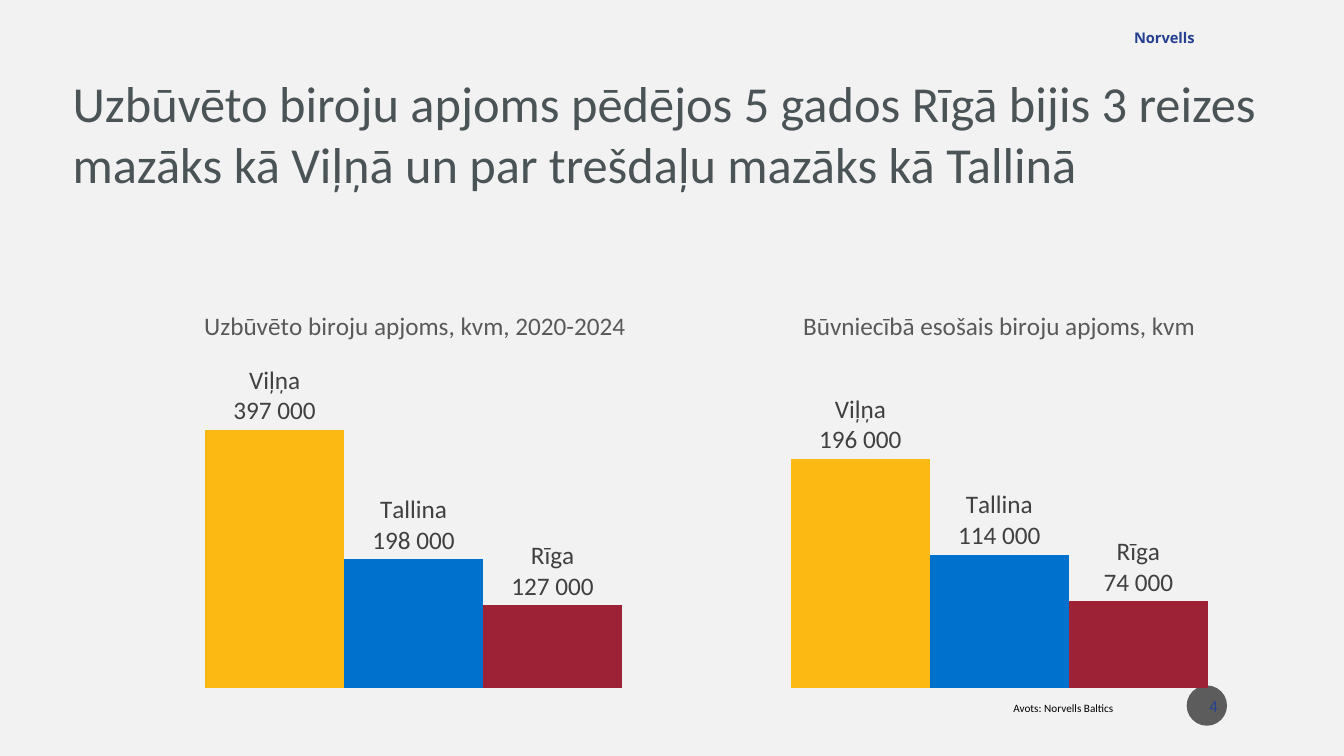
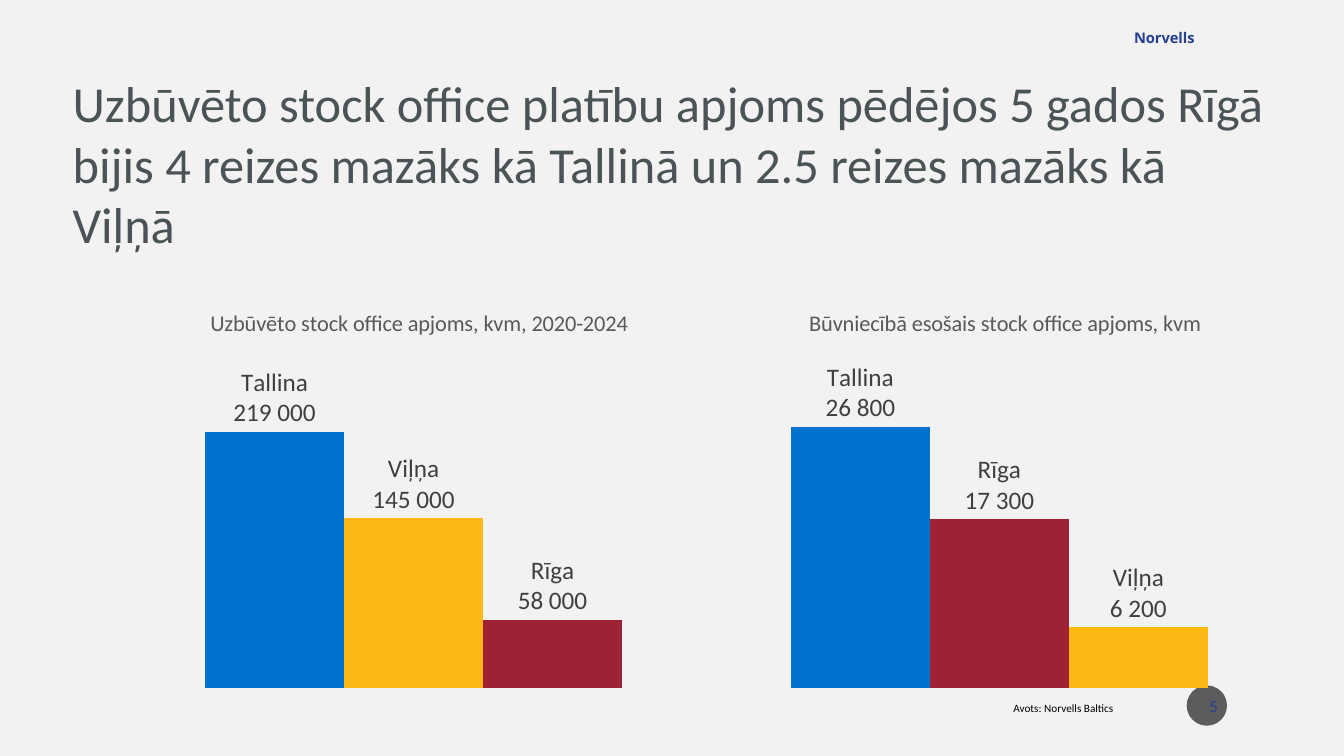
from dataclasses import dataclass

from lxml import etree
from pptx import Presentation
from pptx.chart.data import CategoryChartData
from pptx.dml.color import RGBColor
from pptx.enum.chart import XL_CHART_TYPE, XL_LABEL_POSITION
from pptx.enum.shapes import MSO_SHAPE
from pptx.enum.text import MSO_ANCHOR, MSO_AUTO_SIZE, PP_ALIGN
from pptx.oxml.ns import qn
from pptx.util import Inches, Pt

COLUMNS = XL_CHART_TYPE.COLUMN_CLUSTERED
OUTSIDE_END = XL_LABEL_POSITION.OUTSIDE_END
ELLIPSE = MSO_SHAPE.OVAL
TOP, MIDDLE = MSO_ANCHOR.TOP, MSO_ANCHOR.MIDDLE
LEFT, RIGHT = PP_ALIGN.LEFT, PP_ALIGN.RIGHT
NO_AUTO_SIZE = MSO_AUTO_SIZE.NONE


@dataclass(frozen=True)
class Theme:
    background: str = "F2F2F2"
    title: str = "4A5356"
    brand: str = "25408F"
    badge: str = "1D1D1D"
    source: str = "000000"
    chart_title: str = "595959"
    label: str = "404040"
    body_font: str = "Calibri"
    brand_font: str = "Open Sans"
    title_size: float = 36
    brand_size: float = 10.5
    number_size: float = 12
    source_size: float = 8
    chart_size: float = 10
    label_size: float = 18


CITY_COLORS = {"Viļņa": "FDB913", "Tallina": "0072CE", "Rīga": "9D2235"}
CHART_LEFTS = (0.87, 6.68)
BRAND = "Norvells"
SOURCE = "Avots: Norvells Baltics"

SLIDES = [
    {
        "number": 4,
        "title": "Uzbūvēto biroju apjoms pēdējos 5 gados Rīgā bijis 3 reizes "
                 "mazāks kā Viļņā un par trešdaļu mazāks kā Tallinā",
        "chart_title_size": 18,
        "charts": [
            ("Uzbūvēto biroju apjoms, kvm, 2020-2024", 0.17, 450000,
             {"Viļņa": 397000, "Tallina": 198000, "Rīga": 127000}),
            ("Būvniecībā esošais biroju apjoms, kvm", 0.19, 250000,
             {"Viļņa": 196000, "Tallina": 114000, "Rīga": 74000}),
        ],
    },
    {
        "number": 5,
        "title": "Uzbūvēto stock office platību apjoms pēdējos 5 gados Rīgā bijis "
                 "4 reizes mazāks kā Tallinā un 2.5 reizes mazāks kā Viļņā",
        "chart_title_size": 16,
        "charts": [
            ("Uzbūvēto stock office apjoms, kvm, 2020-2024", 0.18, 250000,
             {"Tallina": 219000, "Viļņa": 145000, "Rīga": 58000}),
            ("Būvniecībā esošais stock office apjoms, kvm", 0.2, 30000,
             {"Tallina": 26800, "Rīga": 17300, "Viļņa": 6200}),
        ],
    },
]


def set_layout(parent, index, **settings):
    for existing in parent.findall(qn("c:layout")):
        parent.remove(existing)
    layout = etree.Element(qn("c:layout"))
    manual = etree.SubElement(layout, qn("c:manualLayout"))
    for name, value in settings.items():
        etree.SubElement(manual, qn(f"c:{name}")).set("val", str(value))
    parent.insert(index, layout)


class Deck:
    def __init__(self, theme):
        self.theme = theme
        self.presentation = Presentation()
        self.presentation.slide_width = Inches(13.33)
        self.presentation.slide_height = Inches(7.5)
        self.fill(self.presentation.slide_master.background.fill, theme.background)
        self.slide = None

    def fill(self, fill, color):
        fill.solid()
        fill.fore_color.rgb = RGBColor.from_string(color)

    def style(self, font, size, color, name=None, bold=False):
        font.name = name or self.theme.body_font
        font.size = Pt(size)
        font.bold = bold
        font.color.rgb = RGBColor.from_string(color)

    def set_text(self, shape, box, text, size, color, name=None, bold=False,
                 align=LEFT, anchor=TOP):
        shape.left, shape.top, shape.width, shape.height = map(Inches, box)
        frame = shape.text_frame
        frame.text = text
        frame.word_wrap = True
        frame.auto_size = NO_AUTO_SIZE
        frame.vertical_anchor = anchor
        frame.margin_left = frame.margin_right = 0
        frame.margin_top = frame.margin_bottom = 0
        paragraph = frame.paragraphs[0]
        paragraph.alignment = align
        self.style(paragraph.runs[0].font, size, color, name, bold)
        return paragraph

    def text(self, box, *content, **options):
        shape = self.slide.shapes.add_textbox(*map(Inches, box))
        self.set_text(shape, box, *content, **options)

    def title(self, text):
        paragraph = self.set_text(self.slide.shapes.title, (0.72, 0.72, 11.91, 0.45),
                                  text, self.theme.title_size, self.theme.title)
        paragraph.space_before = Pt(3)
        paragraph.space_after = Pt(6)

    def badge(self, number):
        box = (11.77, 6.8, 0.4, 0.4)
        shape = self.slide.shapes.add_shape(ELLIPSE, *map(Inches, box))
        shape.shadow.inherit = False
        shape.line.fill.background()
        self.fill(shape.fill, self.theme.badge)
        color = shape._element.spPr.find(qn("a:solidFill"))[0]
        etree.SubElement(color, qn("a:alpha")).set("val", "70000")
        self.text((11.77, 6.88, 0.31, 0.24), str(number), self.theme.number_size,
                  self.theme.brand, align=RIGHT, anchor=MIDDLE)

    def add_slide(self, title, number):
        layout = self.presentation.slide_layouts[5]
        self.slide = self.presentation.slides.add_slide(layout)
        self.title(title)
        self.badge(number)
        self.text((6.78, 0.27, 5.07, 0.2), BRAND, self.theme.brand_size,
                  self.theme.brand, name=self.theme.brand_font, bold=True,
                  align=RIGHT, anchor=MIDDLE)

    def source(self):
        self.text((10.05, 6.96, 1.92, 0.13), SOURCE, self.theme.source_size,
                  self.theme.source)

    def chart(self, left, title, title_size, title_x, maximum, values):
        data = CategoryChartData(number_format="#\\ ##0")
        data.categories = ["1"]
        for city, value in values.items():
            data.add_series(city, [value])
        box = (left, 2.81, 6.53, 4.14)
        chart = self.slide.shapes.add_chart(COLUMNS, *map(Inches, box), data).chart
        self.style(chart.font, self.theme.chart_size, self.theme.source)
        chart.has_legend = False
        chart.has_title = True
        frame = chart.chart_title.text_frame
        frame.text = title
        self.style(frame.paragraphs[0].runs[0].font, title_size, self.theme.chart_title)
        set_layout(chart.chart_title._element, 1, xMode="edge", yMode="edge",
                   x=title_x, y=0.05)
        set_layout(chart._chartSpace.chart.plotArea, 0, layoutTarget="inner",
                   xMode="edge", yMode="edge", x=0.02, y=0.27, w=0.95, h=0.7)
        for axis in (chart.category_axis, chart.value_axis):
            axis.has_major_gridlines = False
            axis.visible = False
        chart.value_axis.minimum_scale = 0
        chart.value_axis.maximum_scale = maximum
        plot = chart.plots[0]
        plot.gap_width = 150
        plot.overlap = 0
        plot.vary_by_categories = False
        for series in plot.series:
            self.fill(series.format.fill, CITY_COLORS[series.name])
            self.label(series.data_labels)

    def label(self, labels):
        labels.show_value = True
        labels.show_series_name = True
        labels.position = OUTSIDE_END
        labels.number_format = "#\\ ##0"
        labels.number_format_is_linked = False
        self.style(labels.font, self.theme.label_size, self.theme.label)
        separator = etree.Element(qn("c:separator"))
        separator.text = "\n"
        labels._element.find(qn("c:showBubbleSize")).addnext(separator)


def main():
    deck = Deck(Theme())
    for content in SLIDES:
        deck.add_slide(content["title"], content["number"])
        for left, (title, title_x, maximum, values) in zip(CHART_LEFTS, content["charts"]):
            deck.chart(left, title, content["chart_title_size"], title_x, maximum, values)
        deck.source()
    deck.presentation.save("out.pptx")


if __name__ == "__main__":
    main()
